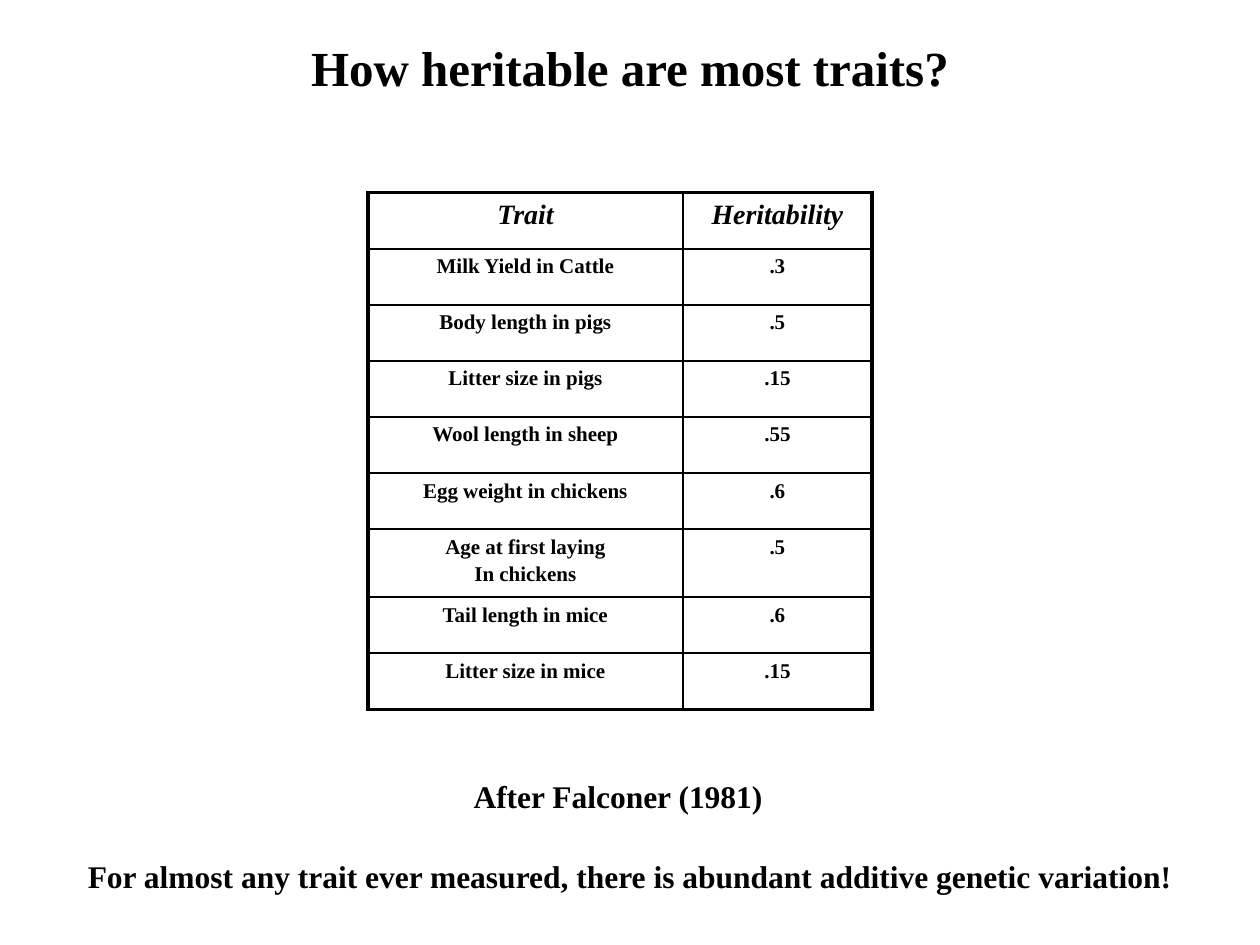
from dataclasses import dataclass

from lxml.etree import SubElement
from pptx import Presentation
from pptx.dml.color import RGBColor
from pptx.enum.text import MSO_AUTO_SIZE, PP_ALIGN
from pptx.oxml.ns import qn
from pptx.util import Inches, Pt

FONT = "Times New Roman"
INK = "000000"
THIN, THICK = 1, 2.25
LEFT, TOP, HIGH, TALL = 2.92, 1.53, 4.1, 0.54
WIDTHS = (2.5, 1.5)


@dataclass
class Label:
    text: str
    left: float
    top: float
    width: float
    height: float
    size: float
    wrap: bool = True


@dataclass
class Trait:
    name: str
    value: str
    size: float = 12
    slant: bool = False


LABELS = [
    Label("How heritable are most traits?", 0, 0.25, 10, 0.57, 28),
    Label("After Falconer (1981)", 3.66, 6.12, 2.51, 0.4, 18, False),
    Label("For almost any trait ever measured, there is abundant additive "
          "genetic variation!", 0, 6.75, 10, 0.4, 18),
]

TRAITS = [
    Trait("Trait", "Heritability", 16, True),
    Trait("Milk Yield in Cattle", ".3"),
    Trait("Body length in pigs", ".5"),
    Trait("Litter size in pigs", ".15"),
    Trait("Wool length in sheep", ".55"),
    Trait("Egg weight in chickens", ".6"),
    Trait("Age at first laying\nIn chickens", ".5"),
    Trait("Tail length in mice", ".6"),
    Trait("Litter size in mice", ".15"),
]


def color(code: str) -> RGBColor:
    return RGBColor.from_string(code)


def add_run(para, text: str, size: float, slant: bool = False) -> None:
    run = para.add_run()
    run.text = text
    font = run.font
    font.name, font.size = FONT, Pt(size)
    font.bold, font.italic = True, slant
    font.color.rgb = color(INK)


def add_label(slide, label: Label) -> None:
    box = slide.shapes.add_textbox(Inches(label.left), Inches(label.top),
                                   Inches(label.width), Inches(label.height))
    frame = box.text_frame
    frame.word_wrap = label.wrap
    frame.auto_size = MSO_AUTO_SIZE.SHAPE_TO_FIT_TEXT
    para = frame.paragraphs[0]
    para.alignment = PP_ALIGN.CENTER if label.wrap else PP_ALIGN.LEFT
    add_run(para, label.text, label.size)


def set_edges(cell, edges: dict[str, float]) -> None:
    props = cell._tc.get_or_add_tcPr()
    for side, width in edges.items():
        line = SubElement(props, qn(f"a:ln{side}"), w=str(Pt(width)))
        fill = SubElement(line, qn("a:solidFill"))
        SubElement(fill, qn("a:srgbClr"), val=INK)


def fill_cell(cell, text: str, trait: Trait) -> None:
    frame = cell.text_frame
    for i, line in enumerate(text.split("\n")):
        para = frame.add_paragraph() if i else frame.paragraphs[0]
        para.alignment = PP_ALIGN.CENTER
        space = SubElement(para._p.get_or_add_pPr(), qn("a:spcBef"))
        SubElement(space, qn("a:spcPct"), val="20000")
        add_run(para, line, trait.size, trait.slant)


def add_traits(slide, traits: list[Trait]) -> None:
    last = len(traits) - 1
    table = slide.shapes.add_table(
        len(traits), len(WIDTHS), Inches(LEFT), Inches(TOP),
        Inches(sum(WIDTHS)), Inches(HIGH)).table
    table.first_row = table.horz_banding = False
    for col, width in zip(table.columns, WIDTHS):
        col.width = Inches(width)
    for r, trait in enumerate(traits):
        tall = "\n" in trait.name
        table.rows[r].height = Inches(TALL if tall else (HIGH - TALL) / last)
        for c, text in enumerate((trait.name, trait.value)):
            cell = table.cell(r, c)
            set_edges(cell, {
                "L": THIN if c else THICK,
                "R": THICK if c else THIN,
                "T": THIN if r else THICK,
                "B": THICK if r == last else THIN,
            })
            cell.fill.background()
            fill_cell(cell, text, trait)


def main() -> None:
    deck = Presentation()
    deck.slide_width, deck.slide_height = Inches(10), Inches(7.5)
    slide = deck.slides.add_slide(deck.slide_layouts[6])
    add_traits(slide, TRAITS)
    for label in LABELS:
        add_label(slide, label)
    deck.save("out.pptx")


if __name__ == "__main__":
    main()
